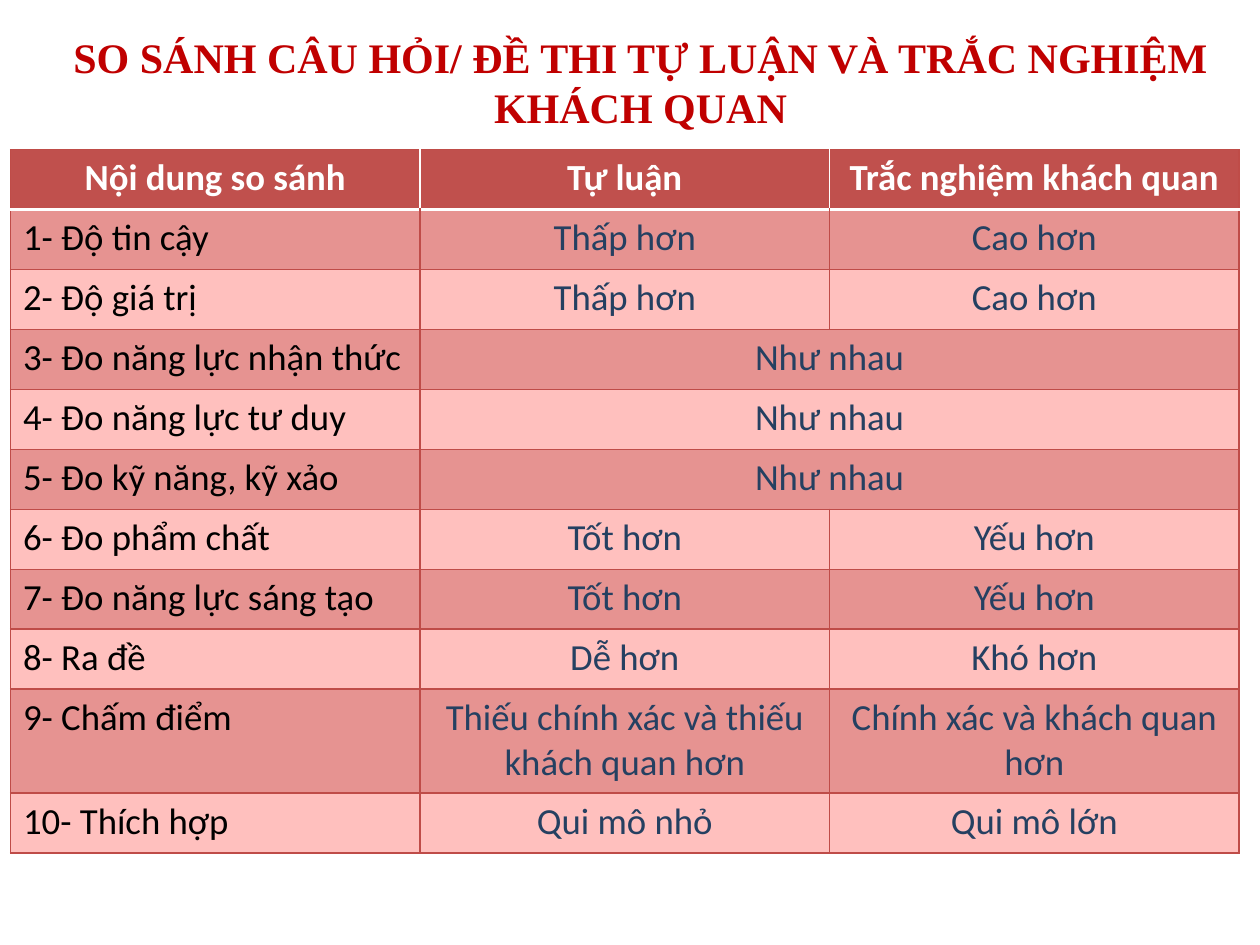
"""Build a slide comparing essay and multiple-choice examination questions."""
from dataclasses import dataclass

from lxml import etree
from pptx import Presentation
from pptx.dml.color import RGBColor
from pptx.enum.text import MSO_ANCHOR, MSO_AUTO_SIZE, PP_ALIGN
from pptx.oxml.ns import qn
from pptx.slide import Slide
from pptx.table import Table, _Cell
from pptx.util import Pt

LEFT, CENTER = PP_ALIGN.LEFT, PP_ALIGN.CENTER
MIDDLE = MSO_ANCHOR.MIDDLE
NO_AUTOFIT = MSO_AUTO_SIZE.NONE

TITLE_RED = RGBColor(0xC0, 0x00, 0x00)
HEADER_RED = RGBColor(0xC0, 0x50, 0x4D)
DARK_BAND = RGBColor(0xE6, 0x93, 0x91)
LIGHT_BAND = RGBColor(0xFF, 0xC0, 0xBE)
BORDER_RED = RGBColor(0xBF, 0x4C, 0x48)
NAVY = RGBColor(0x25, 0x40, 0x61)
BLACK = RGBColor(0x00, 0x00, 0x00)
WHITE = RGBColor(0xFF, 0xFF, 0xFF)

TITLE_ONLY_LAYOUT = 5
COLUMN_COUNT = 3
COLUMN_WIDTH = Pt(234)
ROW_HEIGHT = Pt(34.25)
TALL_ROW_HEIGHT = Pt(59.5)


@dataclass(frozen=True)
class Comparison:
    """One criterion and its verdicts; a missing verdict spans both columns."""

    criterion: str
    essay: str
    multiple_choice: str = ""
    tall: bool = False


@dataclass(frozen=True)
class Border:
    """Colour and width of one cell edge."""

    color: RGBColor
    width: int


THIN = Border(BORDER_RED, Pt(0.75))
HEADER_RULE = Border(WHITE, Pt(2))

TITLE = "SO SÁNH CÂU HỎI/ ĐỀ THI TỰ LUẬN VÀ TRẮC NGHIỆM KHÁCH QUAN"
COMPARISONS = [
    Comparison("Nội dung so sánh", "Tự luận", "Trắc nghiệm khách quan"),
    Comparison("1- Độ tin cậy", "Thấp hơn", "Cao hơn"),
    Comparison("2- Độ giá trị", "Thấp hơn", "Cao hơn"),
    Comparison("3- Đo năng lực nhận thức", "Như nhau"),
    Comparison("4- Đo năng lực tư duy", "Như nhau"),
    Comparison("5- Đo kỹ năng, kỹ xảo", "Như nhau"),
    Comparison("6- Đo phẩm chất", "Tốt hơn", "Yếu hơn"),
    Comparison("7- Đo năng lực sáng tạo", "Tốt hơn", "Yếu hơn"),
    Comparison("8- Ra đề", "Dễ hơn", "Khó hơn"),
    Comparison(
        "9- Chấm điểm",
        "Thiếu chính xác và thiếu khách quan hơn",
        "Chính xác và khách quan hơn",
        tall=True,
    ),
    Comparison("10- Thích hợp", "Qui mô nhỏ", "Qui mô lớn"),
]


def add_title(slide: Slide) -> None:
    """Place and format the title placeholder."""
    title = slide.shapes.title
    title.left, title.top, title.width, title.height = Pt(12), Pt(21.5), Pt(708), Pt(50.5)
    frame = title.text_frame
    frame.text = TITLE
    frame.word_wrap = True
    frame.auto_size = NO_AUTOFIT
    frame.vertical_anchor = MIDDLE
    paragraph = frame.paragraphs[0]
    paragraph.alignment = CENTER
    font = paragraph.font
    font.name, font.size, font.bold = "Times New Roman", Pt(24), True
    font.color.rgb = TITLE_RED


def set_borders(cell: _Cell, borders: dict[str, Border]) -> None:
    """Draw the given edges of a cell."""
    properties = cell._tc.get_or_add_tcPr()
    for edge, border in borders.items():
        line = etree.SubElement(properties, qn(f"a:{edge}"), w=str(border.width))
        fill = etree.SubElement(line, qn("a:solidFill"))
        etree.SubElement(fill, qn("a:srgbClr"), val=str(border.color))


def borders_for(row: int, column: int) -> dict[str, Border]:
    """Return the edges of the cell at a table position."""
    borders = {}
    if row > 0 or column == 0:
        borders["lnL"] = THIN
    if row > 0 or column == COLUMN_COUNT - 1:
        borders["lnR"] = THIN
    borders["lnT"] = HEADER_RULE if row == 1 else THIN
    borders["lnB"] = HEADER_RULE if row == 0 else THIN
    return borders


def format_cell(cell: _Cell, text: str, row: int, column: int) -> None:
    """Write and style one table cell."""
    is_header = row == 0
    set_borders(cell, borders_for(row, column))
    cell.fill.solid()
    band = DARK_BAND if row % 2 else LIGHT_BAND
    cell.fill.fore_color.rgb = HEADER_RED if is_header else band
    cell.text = text
    paragraph = cell.text_frame.paragraphs[0]
    paragraph.alignment = CENTER if is_header or column else LEFT
    font = paragraph.font
    font.name, font.size, font.bold = "Calibri", Pt(21), is_header
    font.color.rgb = WHITE if is_header else NAVY if column else BLACK


def fill_row(table: Table, row: int, comparison: Comparison) -> None:
    """Fill one table row, merging the verdict cells when they agree."""
    table.rows[row].height = TALL_ROW_HEIGHT if comparison.tall else ROW_HEIGHT
    texts = (comparison.criterion, comparison.essay, comparison.multiple_choice)
    for column, text in enumerate(texts):
        format_cell(table.cell(row, column), text, row, column)
    if not comparison.multiple_choice:
        table.cell(row, 1).merge(table.cell(row, 2))


def add_comparison_table(slide: Slide) -> None:
    """Add the table with all comparisons."""
    row_count = len(COMPARISONS)
    table = slide.shapes.add_table(
        row_count, COLUMN_COUNT, Pt(6), Pt(85.5),
        COLUMN_WIDTH * COLUMN_COUNT, ROW_HEIGHT * row_count,
    ).table
    for column in table.columns:
        column.width = COLUMN_WIDTH
    for row, comparison in enumerate(COMPARISONS):
        fill_row(table, row, comparison)


def main() -> None:
    """Create and save the presentation."""
    presentation = Presentation()
    presentation.slide_width, presentation.slide_height = Pt(720), Pt(540)
    slide = presentation.slides.add_slide(presentation.slide_layouts[TITLE_ONLY_LAYOUT])
    add_title(slide)
    add_comparison_table(slide)
    presentation.save("out.pptx")


if __name__ == "__main__":
    main()
